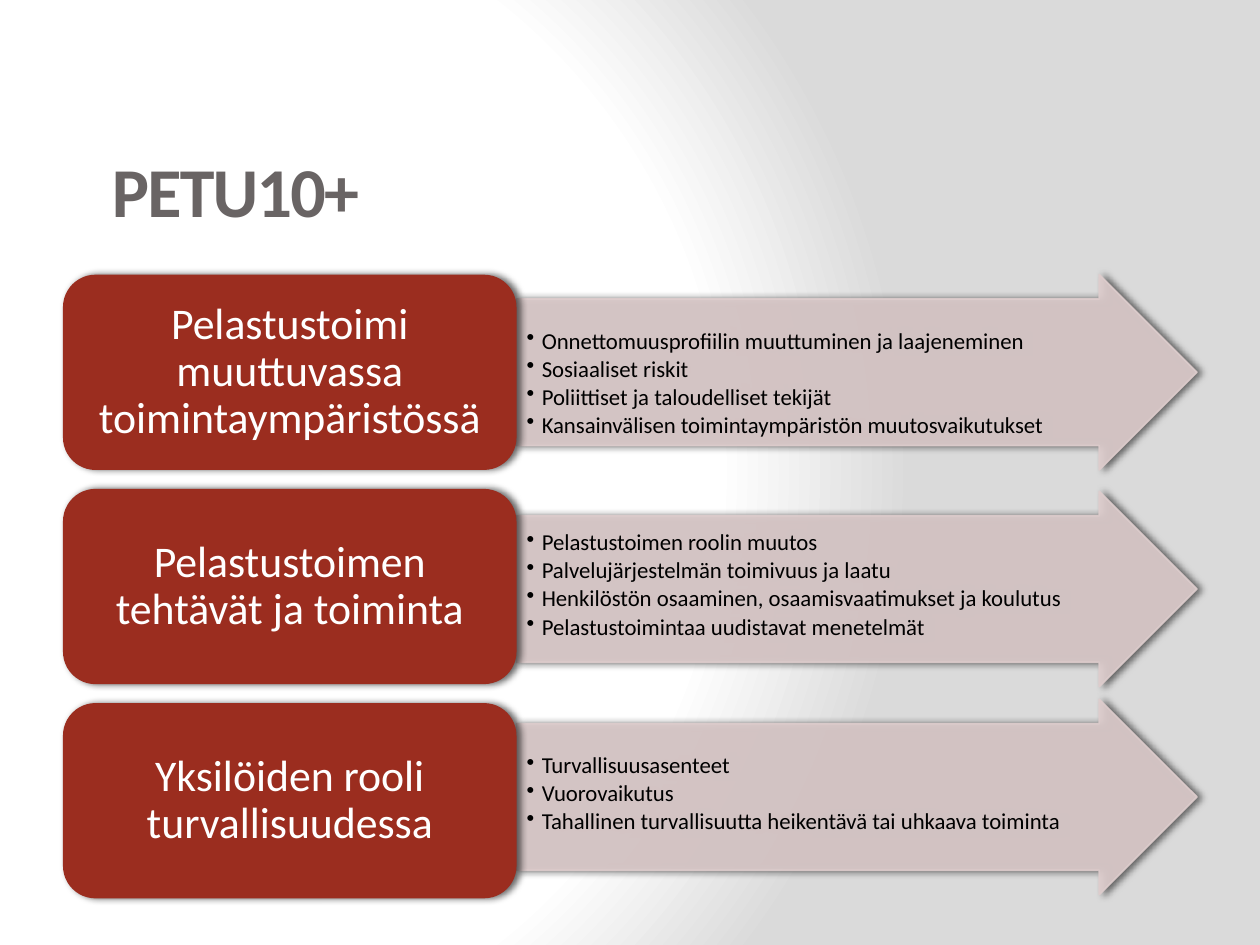
import pptx
import pptx.util
import pptx.dml.color
import pptx.enum.shapes
import pptx.enum.text
import pptx.oxml
import pptx.oxml.ns
from lxml import etree

Inches, Pt = pptx.util.Inches, pptx.util.Pt
KIND = pptx.enum.shapes.MSO_SHAPE
ALIGN = pptx.enum.text.PP_ALIGN
ANCHOR = pptx.enum.text.MSO_ANCHOR
qn = pptx.oxml.ns.qn

TITLE = "PETU10+"
# theme, points, arrow's vertical nudge, text's top inset
ROWS = [
    ("Pelastustoimi muuttuvassa toimintaympäristössä",
     ["Onnettomuusprofiilin muuttuminen ja laajeneminen",
      "Sosiaaliset riskit",
      "Poliittiset ja taloudelliset tekijät",
      "Kansainvälisen toimintaympäristön muutosvaikutukset"], 0, 0.24),
    ("Pelastustoimen tehtävät ja toiminta",
     ["Pelastustoimen roolin muutos",
      "Palvelujärjestelmän toimivuus ja laatu",
      "Henkilöstön osaaminen, osaamisvaatimukset ja koulutus",
      "Pelastustoimintaa uudistavat menetelmät"], 0.02, 0.12),
    ("Yksilöiden rooli turvallisuudessa",
     ["Turvallisuusasenteet",
      "Vuorovaikutus",
      "Tahallinen turvallisuutta heikentävä tai uhkaava toiminta"], -0.03, 0.24),
]
RED, PINK, GREY = "9B2D1F", "DECDCD", "696464"
WIDE, HIGH = 10, 7.5
LEFT, TOP, ROW, PITCH = 0.5, 2.18, 1.55, 1.7
BAND = WIDE - 2 * LEFT
THEME = 0.4 * BAND


def rgb(code):
    return pptx.dml.color.RGBColor.from_string(code)


def xml(text):
    space = 'xmlns:a="http://schemas.openxmlformats.org/drawingml/2006/main"'
    return pptx.oxml.parse_xml(text.replace(">", f" {space}>", 1))


def fade(fill, share):
    """Set the opacity of a solid fill, in percent."""
    color = fill._xPr.find(qn("a:solidFill"))[0]
    etree.SubElement(color, qn("a:alpha")).set("val", str(share * 1000))


def write(shape, lines, size, color, inset, bold=False, bullet=False,
          align=ALIGN.LEFT, anchor=ANCHOR.MIDDLE, lead=0.9, track=0):
    frame = shape.text_frame
    frame.word_wrap = True
    frame.vertical_anchor = anchor
    (frame.margin_left, frame.margin_top,
     frame.margin_right, frame.margin_bottom) = map(Inches, inset)
    for i, line in enumerate(lines):
        para = frame.paragraphs[0] if i == 0 else frame.add_paragraph()
        para.alignment, para.line_spacing = align, lead
        if bullet:
            para.level = 1
            para.space_after = Pt(2)
            props = para._p.get_or_add_pPr()
            props.set("marL", str(Inches(0.12)))
            props.set("indent", str(-Inches(0.12)))
            props.append(xml('<a:buChar char="•"></a:buChar>'))
        run = para.add_run()
        run.text = line
        run.font.name, run.font.size, run.font.bold = "Calibri", Pt(size), bold
        run.font.color.rgb = rgb(color)
        if track:
            run._r.get_or_add_rPr().set("spc", str(track * 100))


def block(slide, kind, box, color):
    """Add a filled shape with a soft shadow to its right."""
    shape = slide.shapes.add_shape(kind, *map(Inches, box))
    shape.fill.solid()
    shape.fill.fore_color.rgb = rgb(color)
    shape.line.fill.background()
    shape.shadow.inherit = False
    shape._element.spPr.find(qn("a:effectLst")).append(xml(
        f'<a:outerShdw blurRad="{Pt(4)}" dist="{Pt(2)}" dir="0" rotWithShape="0">'
        '<a:srgbClr val="000000"><a:alpha val="60000"/></a:srgbClr></a:outerShdw>'))
    return shape


def backdrop(slide):
    fill = slide.background.fill
    fill.solid()
    solid = fill._xPr.find(qn("a:solidFill"))
    stops = "".join(
        f'<a:gs pos="{pos * 1000}"><a:srgbClr val="{code}"/></a:gs>'
        for pos, code in [(0, "FFFFFF"), (75, "FFFFFF"), (100, "DADADA")])
    fill._xPr.replace(solid, xml(
        f'<a:gradFill rotWithShape="1"><a:gsLst>{stops}</a:gsLst><a:path path="circle">'
        '<a:fillToRect l="20000" t="50000" r="100000" b="50000"/>'
        '</a:path></a:gradFill>'))


def main():
    deck = pptx.Presentation()
    deck.slide_width, deck.slide_height = Inches(WIDE), Inches(HIGH)
    slide = deck.slides.add_slide(deck.slide_layouts[6])
    backdrop(slide)

    for i, (theme, points, nudge, drop) in enumerate(ROWS):
        top = TOP + i * PITCH
        arrow = block(slide, KIND.RIGHT_ARROW,
                      (LEFT + THEME, top + nudge, BAND - THEME, ROW), PINK)
        arrow.adjustments[0], arrow.adjustments[1] = 0.75, 0.5
        arrow.line.color.rgb = rgb(PINK)
        arrow.line.width = Pt(1)
        fade(arrow.fill, 90)
        fade(arrow.line.fill, 90)
        write(arrow, points, 13, "000000", (0.08, drop, 0.01, 0.01),
              bullet=True, anchor=ANCHOR.TOP)
        label = block(slide, KIND.ROUNDED_RECTANGLE, (LEFT, top, THEME, ROW), RED)
        write(label, [theme], 25, "FFFFFF", (0.1, 0.05, 0.1, 0.05),
              align=ALIGN.CENTER)

    title = slide.shapes.add_textbox(*map(Inches, (0.79, 1.07, 8.22, 0.87)))
    write(title, [TITLE], 40, GREY, (0.1, 0.05, 0.1, 0.05),
          bold=True, lead=1, track=-1)
    deck.save("out.pptx")


if __name__ == "__main__":
    main()
